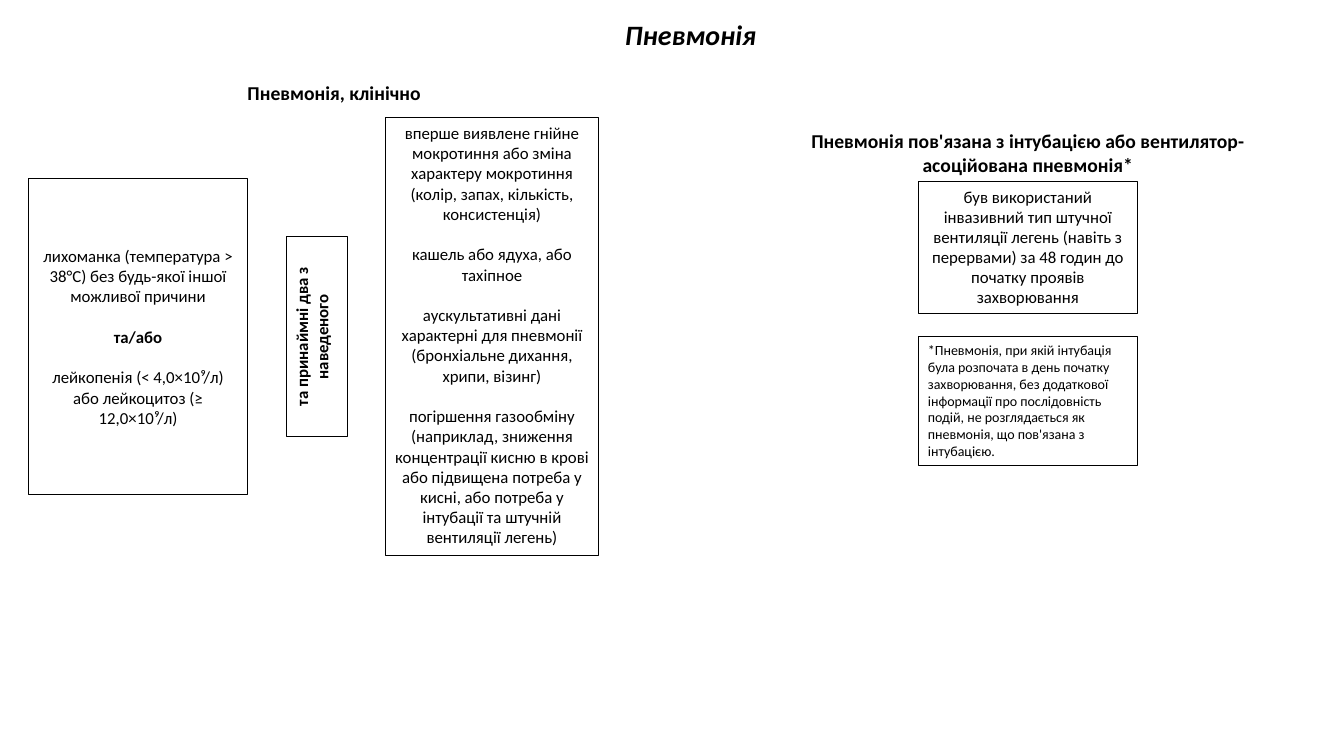
from dataclasses import dataclass

import pptx
import pptx.dml.color
import pptx.enum.shapes
import pptx.enum.text
import pptx.util

Inches, Pt = pptx.util.Inches, pptx.util.Pt
PP_ALIGN = pptx.enum.text.PP_ALIGN
MSO_ANCHOR = pptx.enum.text.MSO_ANCHOR


@dataclass(frozen=True)
class Theme:
    font: str = "Calibri"
    ink: pptx.dml.color.RGBColor = pptx.dml.color.RGBColor(0, 0, 0)
    title: int = 20
    heading: int = 14
    body: int = 12
    note: int = 10
    gap: float = 14.6
    border: float = 0.75


THEME = Theme()
BOLD_LINES = {"та/або"}

FEVER = [
    "лихоманка (температура > 38°C) без будь-якої іншої можливої причини",
    "та/або",
    "лейкопенія (< 4,0×10⁹/л) або лейкоцитоз (≥ 12,0×10⁹/л)",
]
SIGNS = [
    "вперше виявлене гнійне мокротиння або зміна характеру мокротиння "
    "(колір, запах, кількість, консистенція)",
    "кашель або ядуха, або тахіпное",
    "аускультативні дані характерні для пневмонії (бронхіальне дихання, хрипи, візинг)",
    "погіршення газообміну (наприклад, зниження концентрації кисню в крові або "
    "підвищена потреба у кисні, або потреба у інтубації та штучній вентиляції легень)",
]
VENTILATION = (
    "був використаний інвазивний тип штучної вентиляції легень (навіть з перервами) "
    "за 48 годин до початку проявів захворювання"
)
FOOTNOTE = (
    "*Пневмонія, при якій інтубація була розпочата в день початку захворювання, "
    "без додаткової інформації про послідовність подій, не розглядається як пневмонія, "
    "що пов'язана з інтубацією."
)


def write(tf, lines, size, bold=False, italic=False, align=PP_ALIGN.CENTER,
          anchor=MSO_ANCHOR.TOP):
    tf.word_wrap = True
    tf.auto_size = pptx.enum.text.MSO_AUTO_SIZE.NONE
    tf.vertical_anchor = anchor
    for i, line in enumerate(lines):
        p = tf.add_paragraph() if i else tf.paragraphs[0]
        p.alignment = align
        p.space_before = Pt(THEME.gap if i else 0)
        r = p.add_run()
        r.text = line
        r.font.name, r.font.size = THEME.font, Pt(size)
        r.font.bold = bold or line in BOLD_LINES
        r.font.italic = italic
        r.font.color.rgb = THEME.ink


def add_box(s, x, y, w, h, lines, size=THEME.body, **style):
    """Add an outlined rectangle with text and return its text frame."""
    sp = s.shapes.add_shape(pptx.enum.shapes.MSO_SHAPE.RECTANGLE,
                            Inches(x), Inches(y), Inches(w), Inches(h))
    sp.shadow.inherit = False
    sp.fill.background()
    sp.line.color.rgb = THEME.ink
    sp.line.width = Pt(THEME.border)
    write(sp.text_frame, lines, size, **style)
    return sp.text_frame


def add_heading(s, x, y, w, h, text):
    tb = s.shapes.add_textbox(Inches(x), Inches(y), Inches(w), Inches(h))
    write(tb.text_frame, [text], THEME.heading, bold=True)


def add_title(s, x, y, w, h):
    sp = s.shapes.title
    sp.left, sp.top, sp.width, sp.height = (Inches(v) for v in (x, y, w, h))
    write(sp.text_frame, ["Пневмонія"], THEME.title, bold=True, italic=True)


def add_clinical(s, x, y, w, h):
    """Three boxes centred on one horizontal axis, under a heading."""
    add_heading(s, x + 0.38, y, 5.31, 0.34, "Пневмонія, клінічно")
    signs_w, signs_h = 2.12, h - 0.42
    axis = y + h - signs_h / 2
    add_box(s, x, axis - 3.13 / 2, 2.18, 3.13, FEVER, anchor=MSO_ANCHOR.MIDDLE)
    add_box(s, x + w - signs_w, axis - signs_h / 2, signs_w, signs_h, SIGNS)
    tf = add_box(s, x + 2.56, axis - 1.99 / 2, 0.61, 1.99,
                 ["та принаймні два з наведеного"], bold=True)
    tf._txBody.bodyPr.set("vert", "vert270")


def add_intubation(s, x, y, w, h):
    """Heading, criterion and footnote stacked on one vertical axis."""
    add_heading(s, x, y, w, 0.57,
                "Пневмонія пов'язана з інтубацією або вентилятор-асоційована пневмонія*")
    box_w, note_h = 2.18, 1.28
    left = x + (w - box_w) / 2
    add_box(s, left, y + 0.57, box_w, 1.31, [VENTILATION])
    add_box(s, left, y + h - note_h, box_w, note_h, [FOOTNOTE], THEME.note,
            align=PP_ALIGN.LEFT)


def main():
    prs = pptx.Presentation()
    prs.slide_width, prs.slide_height = Inches(13.33), Inches(7.5)
    s = prs.slides.add_slide(prs.slide_layouts[5])
    add_title(s, 1.87, 0.12, 9.96, 0.44)
    add_clinical(s, 0.28, 0.75, 5.66, 4.76)
    add_intubation(s, 7.54, 1.23, 5.31, 3.39)
    prs.save("out.pptx")


if __name__ == "__main__":
    main()
